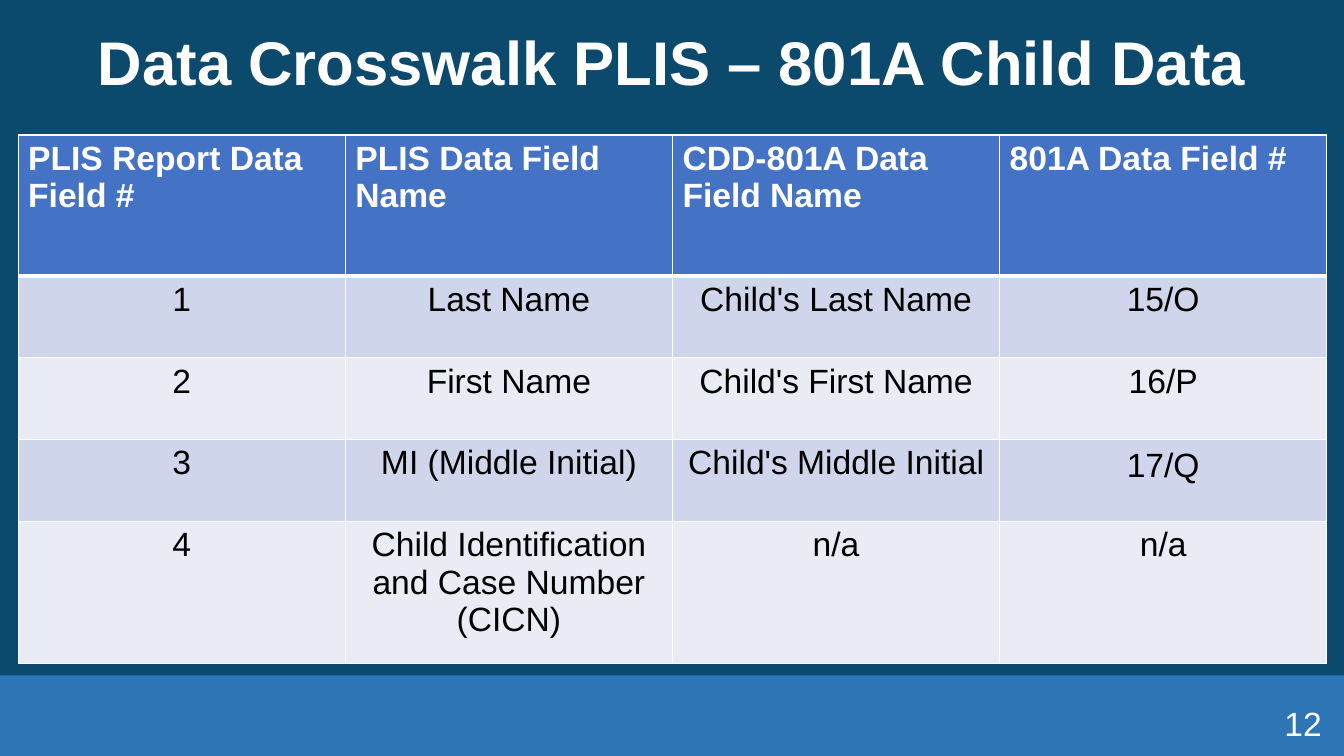
from pptx import Presentation
from pptx.dml.color import RGBColor
from pptx.enum.shapes import MSO_SHAPE
from pptx.enum.text import MSO_ANCHOR, PP_ALIGN
from pptx.oxml.ns import qn
from pptx.util import Inches, Pt
from lxml.etree import SubElement

WHITE = "FFFFFF"
BLACK = "000000"
BACKGROUND = "0C4A6D"
FOOTER_BLUE = "2E75B6"
HEADER_BLUE = "4472C4"
BAND_COLORS = ["CFD5EA", "E9EBF5"]

CROSSWALK = [
    ["PLIS Report Data Field #", "PLIS Data Field Name", "CDD-801A Data Field Name", "801A Data Field #"],
    ["1", "Last Name", "Child's Last Name", "15/O"],
    ["2", "First Name", "Child's First Name", "16/P"],
    ["3", "MI (Middle Initial)", "Child's Middle Initial", "17/Q"],
    ["4", "Child Identification and Case Number (CICN)", "n/a", "n/a"],
]
ROW_HEIGHTS = [1.4, 0.81, 0.81, 0.81, 1.41]


def paint(fill, color):
    fill.solid()
    fill.fore_color.rgb = RGBColor.from_string(color)


def write(frame, text, size, color, align, bold=False):
    frame.text = text
    paragraph = frame.paragraphs[0]
    paragraph.alignment = align
    font = paragraph.runs[0].font
    font.name = "Arial"
    font.size = Pt(size)
    font.bold = bold
    font.color.rgb = RGBColor.from_string(color)
    return paragraph


def add_text(slide, text, box, size, align, anchor, bold=False, margin=0.0):
    frame = slide.shapes.add_textbox(*map(Inches, box)).text_frame
    frame.word_wrap = True
    frame.vertical_anchor = anchor
    frame.margin_left = frame.margin_right = Inches(margin)
    frame.margin_top = frame.margin_bottom = Inches(margin / 2)
    return write(frame, text, size, WHITE, align, bold)


def add_footer_band(slide):
    band = slide.shapes.add_shape(
        MSO_SHAPE.RECTANGLE, Inches(0), Inches(6.7), Inches(13.33), Inches(0.8)
    )
    band.shadow.inherit = False
    paint(band.fill, FOOTER_BLUE)
    band.line.fill.background()


def add_borders(cell, top, bottom):
    properties = cell._tc.get_or_add_tcPr()
    for side, width in (("L", 1), ("R", 1), ("T", top), ("B", bottom)):
        border = SubElement(properties, qn(f"a:ln{side}"), w=str(Pt(width)))
        solid = SubElement(border, qn("a:solidFill"))
        SubElement(solid, qn("a:srgbClr"), val=WHITE)


def add_crosswalk(slide):
    table = slide.shapes.add_table(
        len(CROSSWALK), len(CROSSWALK[0]),
        Inches(0.18), Inches(1.34), Inches(12.98), Inches(sum(ROW_HEIGHTS)),
    ).table
    for row_index, (fields, height) in enumerate(zip(CROSSWALK, ROW_HEIGHTS)):
        table.rows[row_index].height = Inches(height)
        is_header = row_index == 0
        for column_index, field in enumerate(fields):
            cell = table.cell(row_index, column_index)
            add_borders(cell, 3 if row_index == 1 else 1, 3 if is_header else 1)
            if is_header:
                paint(cell.fill, HEADER_BLUE)
                write(cell.text_frame, field, 24, WHITE, PP_ALIGN.LEFT, True)
            else:
                paint(cell.fill, BAND_COLORS[(row_index - 1) % 2])
                write(cell.text_frame, field, 24, BLACK, PP_ALIGN.CENTER)
    middle_initial_field = table.cell(3, 3).text_frame.paragraphs[0]
    middle_initial_field.line_spacing = 1.07
    middle_initial_field.space_after = Pt(8)


def main():
    presentation = Presentation()
    presentation.slide_width = Inches(13.33)
    presentation.slide_height = Inches(7.5)
    slide = presentation.slides.add_slide(presentation.slide_layouts[6])
    paint(slide.background.fill, BACKGROUND)
    add_footer_band(slide)
    title = add_text(
        slide, "Data Crosswalk PLIS – 801A Child Data", (0.17, -0.07, 13, 1.45),
        44, PP_ALIGN.CENTER, MSO_ANCHOR.MIDDLE, bold=True, margin=0.1,
    )
    title.line_spacing = 0.9
    add_crosswalk(slide)
    add_text(slide, "12", (12.12, 7.07, 0.99, 0.3), 24, PP_ALIGN.RIGHT, MSO_ANCHOR.BOTTOM)
    presentation.save("out.pptx")


if __name__ == "__main__":
    main()
